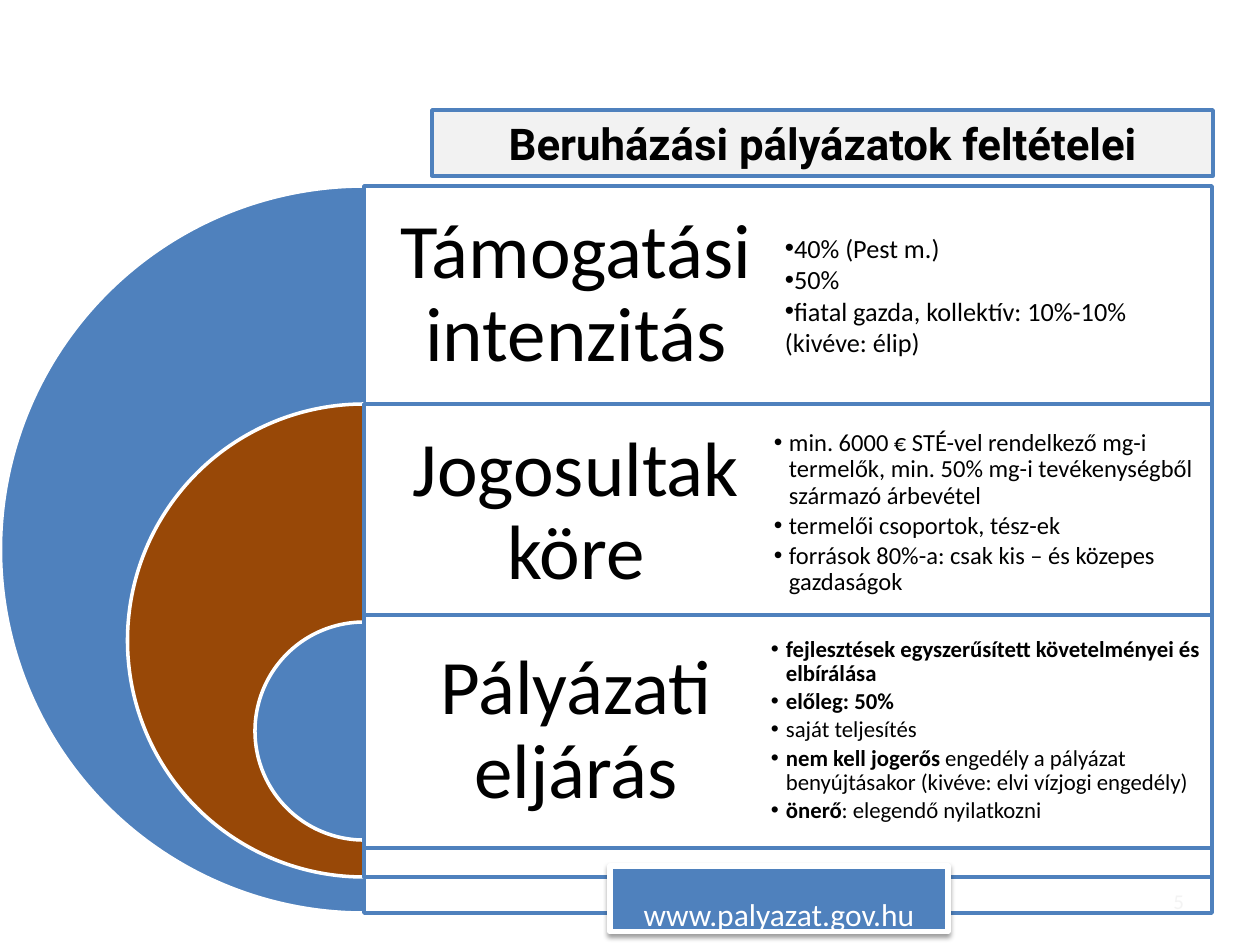
import pptx
import pptx.dml.color
import pptx.enum.shapes
import pptx.enum.text
import pptx.oxml
import pptx.oxml.ns
import pptx.util
import lxml.etree

SHAPE = pptx.enum.shapes.MSO_SHAPE
ALIGN = pptx.enum.text.PP_ALIGN
ANCHOR = pptx.enum.text.MSO_ANCHOR
BLUE, BROWN, WHITE, BLACK = "4F81BD", "984807", "FFFFFF", "000000"
NO_SPACE = {"space_before": pptx.util.Pt(0), "space_after": pptx.util.Pt(0)}
TIGHT = {"space_before": pptx.util.Pt(0), "space_after": pptx.util.Pt(2), "line_spacing": 0.9}


def px(n):
    """Turn whole px into EMU at 126 px to the inch."""
    return pptx.util.Emu(round(n * 914400 / 126))


def rgb(color):
    """Turn a hex string into a colour."""
    return pptx.dml.color.RGBColor.from_string(color)


def apply(obj, values):
    """Set attributes from a dict of format values."""
    for name, value in values.items():
        setattr(obj, name, value)


def add_xml(parent, tag, **attrs):
    """Append a drawing element with attributes to a parent."""
    return lxml.etree.SubElement(parent, pptx.oxml.ns.qn(tag), {k: str(v) for k, v in attrs.items()})


def place(sp, box):
    """Move and size a shape to a px box."""
    apply(sp, dict(zip(("left", "top", "width", "height"), map(px, box))))


def paint(sp, fill, line, width):
    """Give a shape a solid fill and a line."""
    sp.fill.solid()
    sp.fill.fore_color.rgb = rgb(fill)
    sp.line.color.rgb = rgb(line)
    sp.line.width = pptx.util.Pt(width)


def add_shape(s, kind, box, fill, line, width=2):
    """Add a painted preset shape without a shadow."""
    sp = s.shapes.add_shape(kind, *map(px, box))
    sp.shadow.inherit = False
    paint(sp, fill, line, width)
    return sp


def frame(sp, anchor, inset_x, inset_y):
    """Set up a text frame and return it."""
    tf = sp.text_frame
    apply(tf, {
        "word_wrap": True, "auto_size": pptx.enum.text.MSO_AUTO_SIZE.NONE, "vertical_anchor": anchor,
        "margin_left": px(inset_x), "margin_right": px(inset_x),
        "margin_top": px(inset_y), "margin_bottom": px(inset_y),
    })
    return tf


def add_run(p, text, size, color=BLACK, bold=False, name="Calibri"):
    """Add a formatted run to a paragraph."""
    r = p.add_run()
    r.text = text
    apply(r.font, {"name": name, "size": pptx.util.Pt(size), "bold": bold})
    r.font.color.rgb = rgb(color)


def one_line(tf, text, size, align, fmt, **font):
    """Fill a text frame with one paragraph."""
    p = tf.paragraphs[0]
    apply(p, {"alignment": align, **fmt})
    add_run(p, text, size, **font)


def add_number(s, box, text):
    """Add the slide number."""
    tf = frame(s.shapes.add_textbox(*map(px, box)), ANCHOR.MIDDLE, 13, 6)
    one_line(tf, text, 12, ALIGN.RIGHT, NO_SPACE, color="8C8C8C")


def add_panel(s, box, diameter, pie_top, color, head_height, heading):
    """Add a half disc at the left edge of a framed panel with its heading."""
    x, y, w, h = box
    pie = add_shape(s, SHAPE.PIE, (x - diameter / 2, pie_top, diameter, diameter), color, WHITE)
    pie.adjustments[0], pie.adjustments[1] = 54, 162
    panel = add_shape(s, SHAPE.RECTANGLE, box, WHITE, BLUE)
    clr = panel.fill._xPr.find(".//" + pptx.oxml.ns.qn("a:srgbClr"))
    add_xml(clr, "a:alpha", val=90000)
    tf = frame(s.shapes.add_textbox(*map(px, (x, y, w // 2, head_height))), ANCHOR.MIDDLE, 23, 23)
    one_line(tf, heading, 44, ALIGN.CENTER, TIGHT)


def fill_list(s, sp, box, items, size, indent, fmt):
    """Place a body placeholder on top and fill it with bulleted items."""
    place(sp, box)
    s.shapes.element.append(sp.element)
    tf = frame(sp, ANCHOR.MIDDLE, 34, 34)
    for i, runs in enumerate(items):
        p = tf.paragraphs[0] if i == 0 else tf.add_paragraph()
        pPr = p._p.get_or_add_pPr()
        apply_indent = {"marL": px(indent), "indent": -px(indent)}
        for name, value in apply_indent.items():
            pPr.set(name, str(value))
        add_xml(pPr, "a:buFont", typeface="Arial")
        add_xml(pPr, "a:buChar", char="•")
        apply(p, fmt)
        for text, bold in runs:
            add_run(p, text, size, bold=bold)


def fill_title(s, box, text):
    """Place and fill the framed title placeholder."""
    sp = s.shapes.title
    place(sp, box)
    paint(sp, "F2F2F2", BLUE, 2)
    s.shapes.element.append(sp.element)
    one_line(frame(sp, ANCHOR.MIDDLE, 13, 6), text, 25, ALIGN.CENTER, NO_SPACE, bold=True, name="Roboto")


def add_address(s, box, text):
    """Add the web address plate with its soft shadow."""
    sp = add_shape(s, SHAPE.RECTANGLE, box, BLUE, WHITE, 3)
    effects = sp.element.spPr.find(pptx.oxml.ns.qn("a:effectLst"))
    shadow = add_xml(effects, "a:outerShdw", blurRad=pptx.util.Pt(3.1), dist=pptx.util.Pt(1.6), dir=5400000)
    add_xml(add_xml(shadow, "a:srgbClr", val=BLACK), "a:alpha", val=38000)
    one_line(frame(sp, ANCHOR.TOP, 13, 6), text, 18, ALIGN.CENTER, {"line_spacing": 1.6}, color=WHITE)


def main():
    """Build the slide."""
    prs = pptx.Presentation()
    prs.slide_width, prs.slide_height = px(1260), px(945)
    s = prs.slides.add_slide(prs.slide_layouts[4])
    bodies = [sp for sp in s.placeholders if sp.placeholder_format.idx > 0]
    spare = bodies.pop()
    spare.element.getparent().remove(spare.element)

    add_number(s, (903, 876, 294, 50), "5")
    panels = [
        (186, 727, 727, 186, BLUE, 218, "Támogatási intenzitás"),
        (404, 473, 473, 404, BROWN, 218, "Jogosultak köre"),
        (615, 233, 218, 622, BLUE, 233, "Pályázati eljárás"),
    ]
    for top, height, *rest in panels:
        add_panel(s, (364, top, 848, height), *rest)

    lists = [
        ((751, 186, 496, 218), 15, 0, NO_SPACE, [
            [("40% (Pest m.)", False)],
            [("50%", False)],
            [("fiatal gazda, kollektív: 10%-10% (kivéve: élip)", False)],
        ]),
        ((740, 404, 520, 218), 14, 15, TIGHT, [
            [("min. 6000 € STÉ-vel rendelkező mg-i termelők, min. 50% mg-i tevékenységből "
              "származó árbevétel", False)],
            [("termelői csoportok, tész-ek", False)],
            [("források 80%-a: csak kis – és közepes gazdaságok", False)],
        ]),
        ((737, 621, 500, 219), 13, 15, TIGHT, [
            [("fejlesztések egyszerűsített követelményei és elbírálása", True)],
            [("előleg: 50%", True)],
            [("saját teljesítés", False)],
            [("nem kell jogerős ", True),
             ("engedély a pályázat benyújtásakor (kivéve: elvi vízjogi engedély)", False)],
            [("önerő", True), (": elegendő nyilatkozni", False)],
        ]),
    ]
    for sp, (box, size, indent, fmt, items) in zip(bodies, lists):
        fill_list(s, sp, box, items, size, indent, fmt)

    fill_title(s, (432, 110, 781, 66), "Beruházási pályázatok feltételei")
    add_address(s, (610, 866, 338, 66), "www.palyazat.gov.hu")
    prs.save("out.pptx")


if __name__ == "__main__":
    main()
